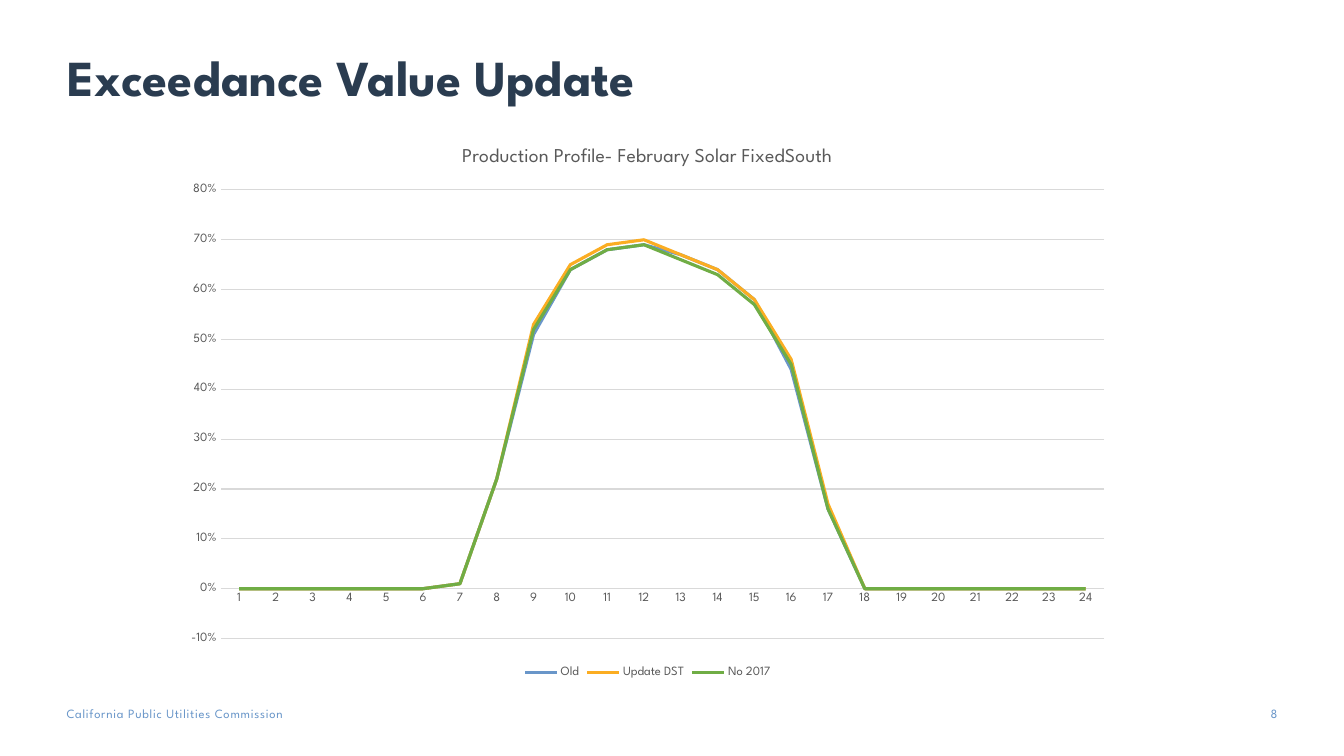
from pptx import Presentation
from pptx import util as u
from pptx.chart.data import CategoryChartData
from pptx.dml.color import RGBColor
from pptx.enum import chart as ch, text

PX = 9144  # EMU per px, 100 px to the inch
FONT = "League Spartan"
NAVY = RGBColor(0x2A, 0x3C, 0x50)
BLUE = RGBColor(0x69, 0x96, 0xC9)
ORANGE = RGBColor(0xFB, 0xAD, 0x22)
GREEN = RGBColor(0x70, 0xAD, 0x45)
GRAY = RGBColor(0x59, 0x59, 0x59)
GRID = RGBColor(0xD9, 0xD9, 0xD9)

# Hourly production in percent, from the first to the last daylight hour
FIRST_HOUR, LAST_HOUR, HOURS = 7, 17, 24
PROFILES = [
    ("Old", BLUE, [1, 22, 51, 64, 68, 69, 67, 64, 58, 44, 16]),
    ("Update DST", ORANGE, [1, 22, 53, 65, 69, 70, 67, 64, 58, 46, 17]),
    ("No 2017", GREEN, [1, 22, 52, 64, 68, 69, 66, 63, 57, 45, 16]),
]


def box(left, top, width, height):
    return [u.Emu(n * PX) for n in (left, top, width, height)]


def set_font(font, size, color, bold=False):
    font.name = FONT
    font.size = u.Pt(size)
    font.bold = bold
    font.color.rgb = color


def write(frame, words, size, color, bold=False, align=text.PP_ALIGN.LEFT,
          anchor=text.MSO_ANCHOR.TOP, insets=(0, 0, 0, 0), spacing=0):
    frame.word_wrap = True
    frame.auto_size = text.MSO_AUTO_SIZE.NONE
    frame.vertical_anchor = anchor
    (frame.margin_left, frame.margin_top,
     frame.margin_right, frame.margin_bottom) = box(*insets)
    paragraph = frame.paragraphs[0]
    paragraph.alignment = align
    run = paragraph.add_run()
    run.text = words
    set_font(run.font, size, color, bold)
    if spacing:
        run.font._element.set("spc", str(spacing))


def add_label(slide, area, words, **style):
    label = slide.shapes.add_textbox(*box(*area))
    write(label.text_frame, words, 9, BLUE, **style)


def style_axis(axis):
    axis.major_tick_mark = axis.minor_tick_mark = ch.XL_TICK_MARK.NONE
    set_font(axis.tick_labels.font, 9, GRAY)


def style_line(line, color, width):
    line.color.rgb = color
    line.width = u.Pt(width)


def add_profile_chart(slide, area, heading):
    data = CategoryChartData(number_format="0%")
    data.categories = [str(hour) for hour in range(1, HOURS + 1)]
    for name, _, daylight in PROFILES:
        percents = [0] * (FIRST_HOUR - 1) + daylight + [0] * (HOURS - LAST_HOUR)
        data.add_series(name, [percent / 100 for percent in percents])
    profile = slide.shapes.add_chart(ch.XL_CHART_TYPE.LINE, *box(*area), data).chart
    set_font(profile.font, 10, GRAY)

    # Heading and legend
    profile.has_title = True
    profile.chart_title.include_in_layout = False
    title_run = profile.chart_title.text_frame.paragraphs[0].add_run()
    title_run.text = heading
    set_font(title_run.font, 14, GRAY)
    profile.has_legend = True
    profile.legend.position = ch.XL_LEGEND_POSITION.BOTTOM
    profile.legend.include_in_layout = False
    set_font(profile.legend.font, 9, GRAY)

    # Axes
    hours, output = profile.category_axis, profile.value_axis
    style_axis(hours)
    style_line(hours.format.line, GRID, 0.75)
    style_axis(output)
    output.format.line.fill.background()
    output.minimum_scale, output.maximum_scale, output.major_unit = -0.1, 0.8, 0.1
    output.tick_labels.number_format = "0%"
    output.tick_labels.number_format_is_linked = False
    output.has_major_gridlines = True
    style_line(output.major_gridlines.format.line, GRID, 0.75)

    # Series
    profile.plots[0].vary_by_categories = False
    for series, (_, color, _) in zip(profile.plots[0].series, PROFILES):
        series.smooth = False
        series.marker.style = ch.XL_MARKER_STYLE.NONE
        style_line(series.format.line, color, 2.25)


def main():
    deck = Presentation()
    deck.slide_width, deck.slide_height = u.Emu(1333 * PX), u.Emu(750 * PX)
    slide = deck.slides.add_slide(deck.slide_layouts[5])

    # Title
    title = slide.shapes.title
    title.left, title.top, title.width, title.height = box(67, 40, 1201, 71)
    write(title.text_frame, "Exceedance Value Update", 36, NAVY, bold=True,
          anchor=text.MSO_ANCHOR.BOTTOM, insets=(0, 5, 10, 5))

    # Chart
    add_profile_chart(slide, (171, 126, 943, 551),
                      "Production Profile- February Solar FixedSouth")

    # Footer
    add_label(slide, (66, 700, 321, 15), "California Public Utilities Commission",
              spacing=50)
    add_label(slide, (1225, 700, 42, 20), "8", align=text.PP_ALIGN.RIGHT)

    deck.save("out.pptx")


if __name__ == "__main__":
    main()
